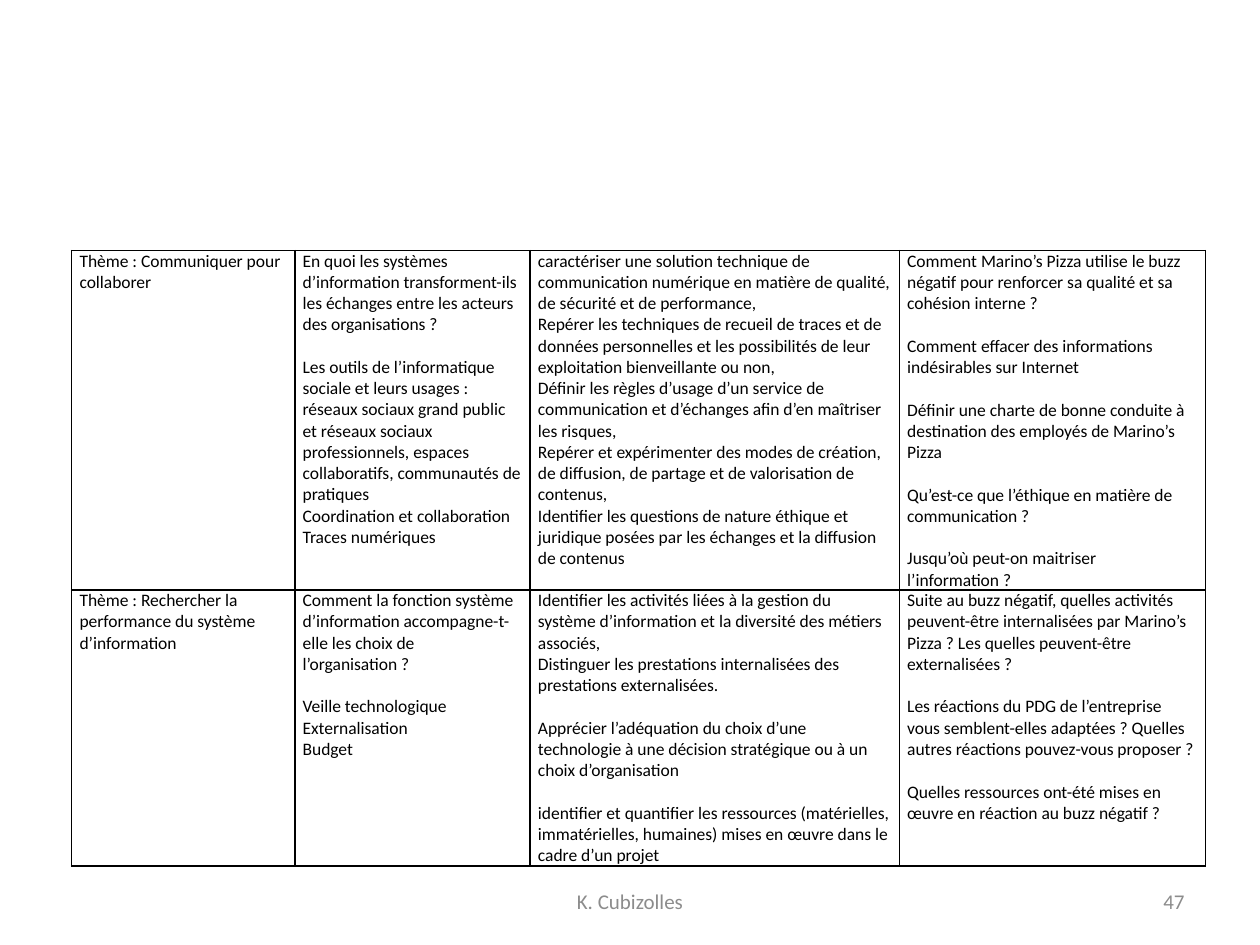
from lxml.etree import SubElement
from pptx import Presentation
from pptx.dml.color import RGBColor
from pptx.enum.text import MSO_ANCHOR, PP_ALIGN
from pptx.oxml.ns import qn
from pptx.util import Pt

COLORS = {"text": "000000", "border": "000000", "footer": "8C8C8C"}
FONT = "Calibri"
COLUMN_WIDTHS = [127.5, 134.5, 211, 175]
ROW_HEIGHTS = [194, 157.5]
GROUP_GAP = 12.2

THEMES = [
    [
        [["Thème : Communiquer pour collaborer"]],
        [
            ["En quoi les systèmes d’information transforment-ils les échanges entre les acteurs des organisations ?"],
            [
                "Les outils de l’informatique sociale et leurs usages : réseaux sociaux grand public et réseaux sociaux professionnels, espaces collaboratifs, communautés de pratiques",
                "Coordination et collaboration",
                "Traces numériques",
            ],
        ],
        [[
            "caractériser une solution technique de communication numérique en matière de qualité, de sécurité et de performance,",
            "Repérer les techniques de recueil de traces et de données personnelles et les possibilités de leur exploitation bienveillante ou non,",
            "Définir les règles d’usage d’un service de communication et d’échanges afin d’en maîtriser les risques,",
            "Repérer et expérimenter des modes de création, de diffusion, de partage et de valorisation de contenus,",
            "Identifier les questions de nature éthique et juridique posées par les échanges et la diffusion de contenus",
        ]],
        [
            ["Comment Marino’s Pizza utilise le buzz négatif pour renforcer sa qualité et sa cohésion interne ?"],
            ["Comment effacer des informations indésirables sur Internet"],
            ["Définir une charte de bonne conduite à destination des employés de Marino’s Pizza"],
            ["Qu’est-ce que l’éthique en matière de communication ?"],
            ["Jusqu’où peut-on maitriser l’information ?"],
        ],
    ],
    [
        [["Thème : Rechercher la performance du système d’information"]],
        [
            ["Comment la fonction système d’information accompagne-t-elle les choix de l’organisation ?"],
            ["Veille technologique", "Externalisation", "Budget"],
        ],
        [
            [
                "Identifier les activités liées à la gestion du système d’information et la diversité des métiers associés,",
                "Distinguer les prestations internalisées des prestations externalisées.",
            ],
            ["Apprécier l’adéquation du choix d’une technologie à une décision stratégique ou à un choix d’organisation"],
            ["identifier et quantifier les ressources (matérielles, immatérielles, humaines) mises en œuvre dans le cadre d’un projet"],
        ],
        [
            ["Suite au buzz négatif, quelles activités peuvent-être internalisées par Marino’s Pizza ? Les quelles peuvent-être externalisées ?"],
            ["Les réactions du PDG de l’entreprise vous semblent-elles adaptées ? Quelles autres réactions pouvez-vous proposer ?"],
            ["Quelles ressources ont-été mises en œuvre en réaction au buzz négatif ?"],
        ],
    ],
]


def set_font(paragraph, size, color):
    paragraph.font.name = FONT
    paragraph.font.size = Pt(size)
    paragraph.font.color.rgb = RGBColor.from_string(COLORS[color])


def format_cell(cell):
    cell.margin_left = cell.margin_right = Pt(4.5)
    cell.margin_top = cell.margin_bottom = Pt(0)
    properties = cell._tc.get_or_add_tcPr()
    for side in ("a:lnL", "a:lnR", "a:lnT", "a:lnB"):
        line = SubElement(properties, qn(side), w=str(Pt(1)))
        fill = SubElement(line, qn("a:solidFill"))
        SubElement(fill, qn("a:srgbClr"), val=COLORS["border"])
    cell.fill.background()


presentation = Presentation()
presentation.slide_width = Pt(720)
presentation.slide_height = Pt(540)
slide = presentation.slides.add_slide(presentation.slide_layouts[6])

for text, left, width, alignment in [
    ("K. Cubizolles", 246, 228, PP_ALIGN.CENTER),
    ("47", 516, 168, PP_ALIGN.RIGHT),
]:
    footer = slide.shapes.add_textbox(Pt(left), Pt(500.5), Pt(width), Pt(28.75))
    footer.text_frame.word_wrap = True
    footer.text_frame.vertical_anchor = MSO_ANCHOR.MIDDLE
    paragraph = footer.text_frame.paragraphs[0]
    paragraph.text = text
    paragraph.alignment = alignment
    set_font(paragraph, 12, "footer")

table = slide.shapes.add_table(
    len(ROW_HEIGHTS), len(COLUMN_WIDTHS), Pt(41), Pt(143.25),
    Pt(sum(COLUMN_WIDTHS)), Pt(sum(ROW_HEIGHTS)),
).table
table.first_row = False
table.horz_banding = False
for column, width in zip(table.columns, COLUMN_WIDTHS):
    column.width = Pt(width)

for row, height, theme in zip(table.rows, ROW_HEIGHTS, THEMES):
    row.height = Pt(height)
    for cell, groups in zip(row.cells, theme):
        format_cell(cell)
        cell.text = "\n".join(text for group in groups for text in group)
        paragraphs = iter(cell.text_frame.paragraphs)
        for group_index, group in enumerate(groups):
            for text_index in range(len(group)):
                paragraph = next(paragraphs)
                set_font(paragraph, 10, "text")
                if group_index > 0 and text_index == 0:
                    paragraph.space_before = Pt(GROUP_GAP)

presentation.save("out.pptx")
